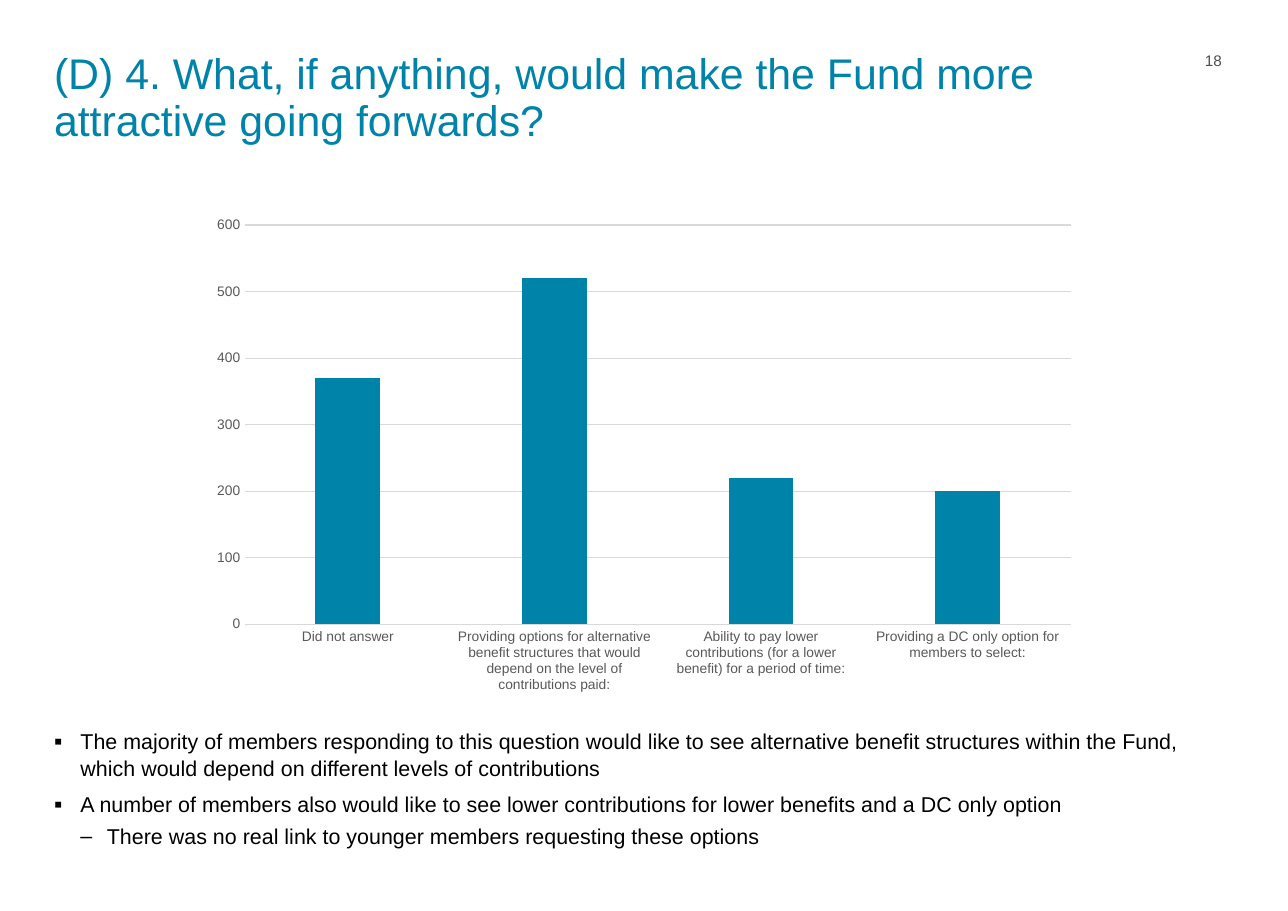
from lxml.etree import SubElement
from pptx import Presentation
from pptx.chart.data import CategoryChartData
from pptx.dml.color import RGBColor
from pptx.enum.chart import XL_CHART_TYPE as ChartType, XL_TICK_MARK as TickMark
from pptx.enum.text import MSO_ANCHOR as Anchor, MSO_AUTO_SIZE as AutoSize, PP_ALIGN as Align
from pptx.oxml.ns import qn
from pptx.util import Inches, Pt

TEAL = RGBColor(0x00, 0x83, 0xA9)
BLACK = RGBColor(0x00, 0x00, 0x00)
SLATE = RGBColor(0x4D, 0x4F, 0x53)
AXIS_TEXT = RGBColor(0x59, 0x59, 0x59)
GRID = RGBColor(0xD9, 0xD9, 0xD9)
INDENT = 0.24
TITLE_ONLY = 5

TITLE = "(D) 4. What, if anything, would make the Fund more attractive going forwards?"
ANSWERS = {
    "Did not answer": 370,
    "Providing options for alternative benefit structures that would depend on "
    "the level of contributions paid:": 520,
    "Ability to pay lower contributions (for a lower benefit) for a period of time:": 220,
    "Providing a DC only option for members to select:": 200,
}
FINDINGS = [
    (0, "The majority of members responding to this question would like to see alternative "
        "benefit structures within the Fund, which would depend on different levels of contributions"),
    (0, "A number of members also would like to see lower contributions for lower benefits "
        "and a DC only option"),
    (1, "There was no real link to younger members requesting these options"),
]


class SurveySlide:
    """Holds the slide and its style, with a method for each kind of element."""

    def __init__(self, presentation, font_name="Arial"):
        self.slide = presentation.slides.add_slide(presentation.slide_layouts[TITLE_ONLY])
        self.font_name = font_name

    def style_font(self, font, size, color):
        font.name = self.font_name
        font.size = Pt(size)
        font.color.rgb = color

    def prepare_frame(self, shape):
        frame = shape.text_frame
        frame.margin_left = frame.margin_top = frame.margin_right = frame.margin_bottom = 0
        frame.word_wrap = True
        frame.auto_size = AutoSize.NONE
        frame.vertical_anchor = Anchor.TOP
        return frame

    def fill_line(self, shape, text, size, color, align):
        frame = self.prepare_frame(shape)
        frame.text = text
        paragraph = frame.paragraphs[0]
        paragraph.alignment = align
        paragraph.line_spacing = 0.9
        self.style_font(paragraph.font, size, color)

    def add_title(self, text, left, top, width, height):
        title = self.slide.shapes.title
        title.left, title.top = Inches(left), Inches(top)
        title.width, title.height = Inches(width), Inches(height)
        self.fill_line(title, text, 28, TEAL, Align.LEFT)

    def add_text_box(self, left, top, width, height):
        return self.slide.shapes.add_textbox(
            Inches(left), Inches(top), Inches(width), Inches(height))

    def add_page_number(self, text, *place):
        self.fill_line(self.add_text_box(*place), text, 10, SLATE, Align.RIGHT)

    def add_bullets(self, items, *place):
        frame = self.prepare_frame(self.add_text_box(*place))
        for index, (level, text) in enumerate(items):
            paragraph = frame.add_paragraph() if index else frame.paragraphs[0]
            paragraph.text = text
            paragraph.level = level
            paragraph.line_spacing = 1.05
            if index:
                paragraph.space_before = Pt(3 if level else 6)
            properties = paragraph._p.get_or_add_pPr()
            properties.set("marL", str(Inches(INDENT * (level + 1))))
            properties.set("indent", str(Inches(-INDENT)))
            SubElement(properties, qn("a:buSzPct"), val="100000" if level else "110000")
            SubElement(properties, qn("a:buFont"), typeface=self.font_name)
            SubElement(properties, qn("a:buChar"), char="‒" if level else "▪")
            self.style_font(paragraph.font, 14, BLACK)

    def add_column_chart(self, name, values, left, top, width, height):
        data = CategoryChartData()
        data.categories = list(values)
        data.add_series(name, list(values.values()))
        chart = self.slide.shapes.add_chart(
            ChartType.COLUMN_CLUSTERED, Inches(left), Inches(top),
            Inches(width), Inches(height), data).chart
        chart.has_legend = False
        chart.has_title = False
        self.style_font(chart.font, 10, BLACK)

        plot = chart.plots[0]
        plot.gap_width, plot.overlap = 219, -27
        plot.vary_by_categories = False
        fill = plot.series[0].format.fill
        fill.solid()
        fill.fore_color.rgb = TEAL

        for axis in (chart.category_axis, chart.value_axis):
            axis.major_tick_mark = axis.minor_tick_mark = TickMark.NONE
            self.style_font(axis.tick_labels.font, 9, AXIS_TEXT)
        value_axis = chart.value_axis
        value_axis.minimum_scale, value_axis.maximum_scale = 0, 600
        value_axis.major_unit = 100
        value_axis.format.line.fill.background()
        for line in (chart.category_axis.format.line, value_axis.major_gridlines.format.line):
            line.color.rgb = GRID
            line.width = Pt(0.75)


def main():
    presentation = Presentation()
    presentation.slide_width, presentation.slide_height = Inches(11.69), Inches(8.27)
    survey = SurveySlide(presentation)
    survey.add_title(TITLE, 0.49, 0.48, 10.3, 0.83)
    survey.add_page_number("18", 10.7, 0.48, 0.39, 0.2)
    survey.add_column_chart("Series 1", ANSWERS, 1.81, 1.88, 8.07, 4.5)
    survey.add_bullets(FINDINGS, 0.49, 6.6, 10.51, 1.4)
    presentation.save("out.pptx")


if __name__ == "__main__":
    main()
